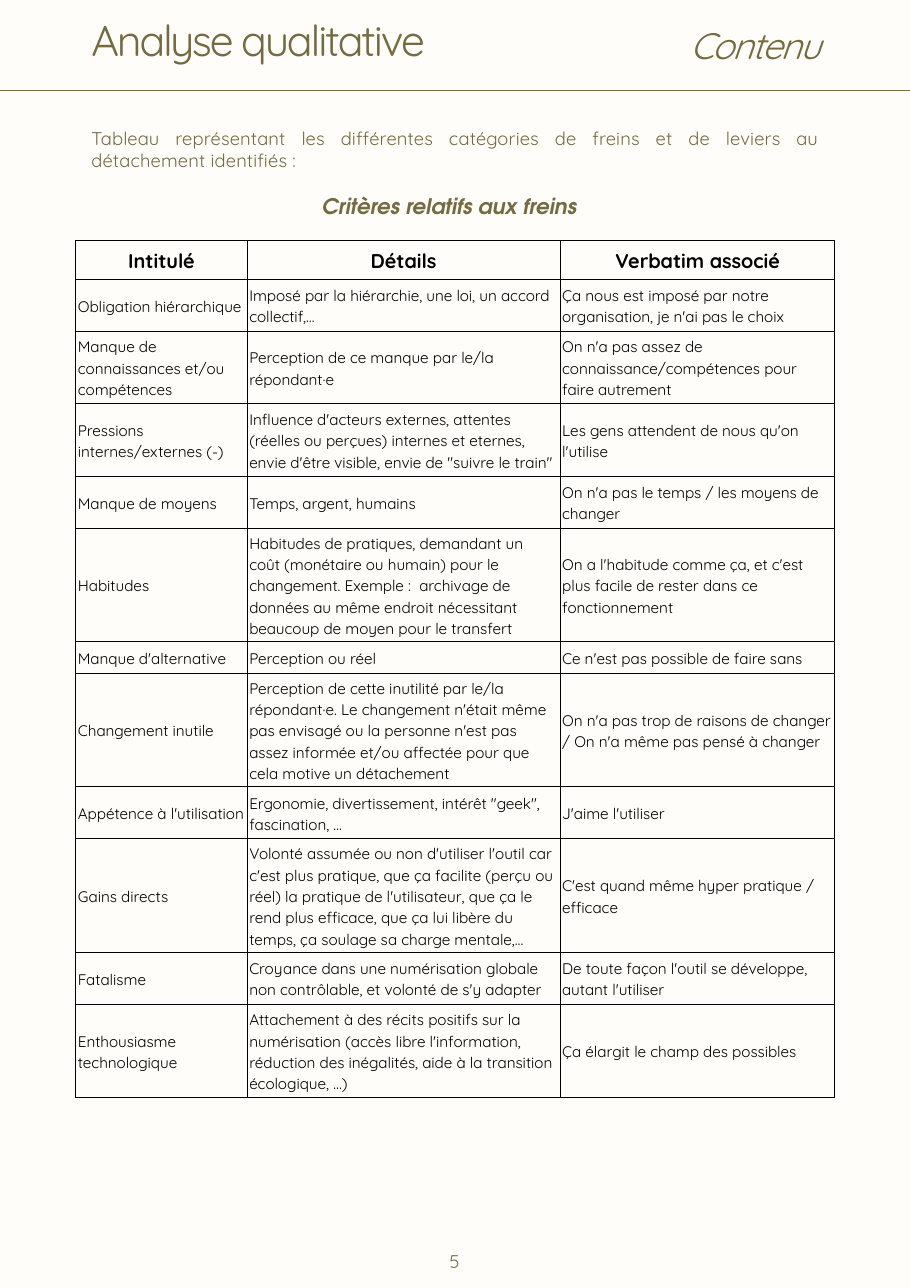
"""Build the page that tabulates the criteria holding people back."""
from lxml import etree
from pptx import Presentation
from pptx.dml.color import RGBColor
from pptx.enum.shapes import MSO_CONNECTOR
from pptx.enum.text import MSO_ANCHOR, PP_ALIGN
from pptx.oxml.ns import qn
from pptx.util import Pt

LEFT, CENTER, RIGHT = PP_ALIGN.LEFT, PP_ALIGN.CENTER, PP_ALIGN.RIGHT
JUSTIFY = PP_ALIGN.JUSTIFY
MIDDLE = MSO_ANCHOR.MIDDLE
STRAIGHT = MSO_CONNECTOR.STRAIGHT

HEADERS = ("Intitulé", "Détails", "Verbatim associé")
CRITERIA = [
    (2, "Obligation hiérarchique",
     "Imposé par la hiérarchie, une loi, un accord collectif,…",
     "Ça nous est imposé par notre organisation, je n'ai pas le choix"),
    (3, "Manque de connaissances et/ou compétences",
     "Perception de ce manque par le/la répondant·e",
     "On n'a pas assez de connaissance/compétences pour faire autrement"),
    (3, "Pressions internes/externes (-)",
     "Influence d'acteurs externes, attentes (réelles ou perçues) internes et "
     "eternes, envie d'être visible, envie de \"suivre le train\"",
     "Les gens attendent de nous qu'on l'utilise"),
    (2, "Manque de moyens",
     "Temps, argent, humains",
     "On n'a pas le temps / les moyens de changer"),
    (5, "Habitudes",
     "Habitudes de pratiques, demandant un coût (monétaire ou humain) pour le "
     "changement. Exemple :  archivage de données au même endroit nécessitant "
     "beaucoup de moyen pour le transfert",
     "On a l'habitude comme ça, et c'est plus facile de rester dans ce fonctionnement"),
    (1, "Manque d'alternative",
     "Perception ou réel",
     "Ce n'est pas possible de faire sans"),
    (5, "Changement inutile",
     "Perception de cette inutilité par le/la répondant·e. Le changement n'était "
     "même pas envisagé ou la personne n'est pas assez informée et/ou affectée "
     "pour que cela motive un détachement",
     "On n'a pas trop de raisons de changer / On n'a même pas pensé à changer"),
    (2, "Appétence à l'utilisation",
     "Ergonomie, divertissement, intérêt \"geek\", fascination, …",
     "J'aime l'utiliser"),
    (5, "Gains directs",
     "Volonté assumée ou non d'utiliser l'outil car c'est plus pratique, que ça "
     "facilite (perçu ou réel) la pratique de l'utilisateur, que ça le rend plus "
     "efficace, que ça lui libère du temps, ça soulage sa charge mentale,…",
     "C'est quand même hyper pratique / efficace"),
    (2, "Fatalisme",
     "Croyance dans une numérisation globale non contrôlable, et volonté de s'y adapter",
     "De toute façon l'outil se développe, autant l'utiliser"),
    (4, "Enthousiasme technologique",
     "Attachement à des récits positifs sur la numérisation (accès libre "
     "l'information, réduction des inégalités, aide à la transition écologique, …)",
     "Ça élargit le champ des possibles"),
]

THEME = {
    "paper": "FFFDF9", "olive": "746B43", "black": "000000",
    "body_font": "Quicksand", "caption_font": "TeX Gyre Adventor",
    "title": 28, "section": 24, "caption": 14, "header": 13, "intro": 12, "cell": 10,
    "rule": 0.75,
}
TEXTS = [
    ("Contenu", (447.84, 21.6, 88.56, 23.8),
     dict(size="section", leading=21.8, align=RIGHT, italic=True, spacing=-1.2)),
    ("Analyse qualitative", (59.76, 17.3, 220.3, 27.4),
     dict(size="title", leading=25.5, spacing=-1.4)),
    ("Tableau représentant les différentes catégories de freins et de leviers au "
     "détachement identifiés :", (59.76, 83.5, 475.9, 28.6),
     dict(size="intro", leading=14.3, align=JUSTIFY, spacing=0.1)),
    ("Critères relatifs aux freins", (59.76, 126.4, 468, 16.6),
     dict(size="caption", leading=16.6, align=CENTER, font="caption_font",
          bold=True, italic=True)),
    ("5", (293.8, 814.3, 7.2, 15.1), dict(size="intro", leading=16.8, spacing=0.1)),
]

PAGE_SIZE = (594.72, 841.68)
RULE_Y = 59.04
TABLE_LEFT, TABLE_TOP = 49.5, 157
COLUMN_WIDTHS = (112, 204.5, 179.7)
HEADER_HEIGHT, ONE_LINE_HEIGHT, EXTRA_LINE = 25.5, 20.6, 13.4
CELL_INSET = 1.44


def color(name):
    return RGBColor.from_string(THEME[name])


def write(frame, text, *, size, leading, align=LEFT, font="body_font", ink="olive",
          bold=False, italic=False, spacing=0):
    frame.word_wrap = True
    para = frame.paragraphs[0]
    para.alignment = align
    para.line_spacing = Pt(leading)
    span = para.add_run()
    span.text = text
    span.font.name = THEME[font]
    span.font.size = Pt(THEME[size])
    span.font.color.rgb = color(ink)
    span.font.bold, span.font.italic = bold, italic
    if spacing:
        span.font._element.set("spc", str(round(spacing * 100)))


def set_margins(holder, inset):
    holder.margin_left = holder.margin_right = Pt(inset)
    holder.margin_top = holder.margin_bottom = Pt(inset)


def add_text(page, text, place, style):
    box = page.shapes.add_textbox(*map(Pt, place))
    set_margins(box.text_frame, 0)
    write(box.text_frame, text, **style)


def add_borders(cell):
    properties = cell._tc.get_or_add_tcPr()
    for position, side in enumerate(("a:lnL", "a:lnR", "a:lnT", "a:lnB")):
        line = etree.Element(qn(side), w=str(Pt(THEME["rule"])))
        fill = etree.SubElement(line, qn("a:solidFill"))
        etree.SubElement(fill, qn("a:srgbClr"), val=THEME["black"])
        properties.insert(position, line)


def add_criteria_table(page):
    heights = [HEADER_HEIGHT] + [
        ONE_LINE_HEIGHT + EXTRA_LINE * (lines - 1) for lines, *_ in CRITERIA]
    rows = [HEADERS] + [texts for _, *texts in CRITERIA]
    table = page.shapes.add_table(
        len(rows), len(HEADERS), Pt(TABLE_LEFT), Pt(TABLE_TOP),
        Pt(sum(COLUMN_WIDTHS)), Pt(sum(heights))).table
    table.horz_banding = False
    for column, width in zip(table.columns, COLUMN_WIDTHS):
        column.width = Pt(width)
    header_style = dict(size="header", leading=18.2, align=CENTER, bold=True)
    cell_style = dict(size="cell", leading=14)
    for index, (row, height, texts) in enumerate(zip(table.rows, heights, rows)):
        row.height = Pt(height)
        style = cell_style if index else header_style
        for cell, text in zip(row.cells, texts):
            set_margins(cell, CELL_INSET)
            cell.vertical_anchor = MIDDLE
            cell.fill.background()
            add_borders(cell)
            write(cell.text_frame, text, ink="black", **style)


def add_rule(page):
    rule = page.shapes.add_connector(
        STRAIGHT, Pt(0), Pt(RULE_Y), Pt(PAGE_SIZE[0]), Pt(RULE_Y))
    rule.line.color.rgb = color("olive")
    rule.line.width = Pt(THEME["rule"])
    etree.SubElement(rule._element.spPr, qn("a:effectLst"))


def main():
    deck = Presentation()
    deck.slide_width, deck.slide_height = map(Pt, PAGE_SIZE)
    page = deck.slides.add_slide(deck.slide_layouts[6])
    page.background.fill.solid()
    page.background.fill.fore_color.rgb = color("paper")
    add_rule(page)
    add_criteria_table(page)
    for text, place, style in TEXTS:
        add_text(page, text, place, style)
    deck.save("out.pptx")


if __name__ == "__main__":
    main()
